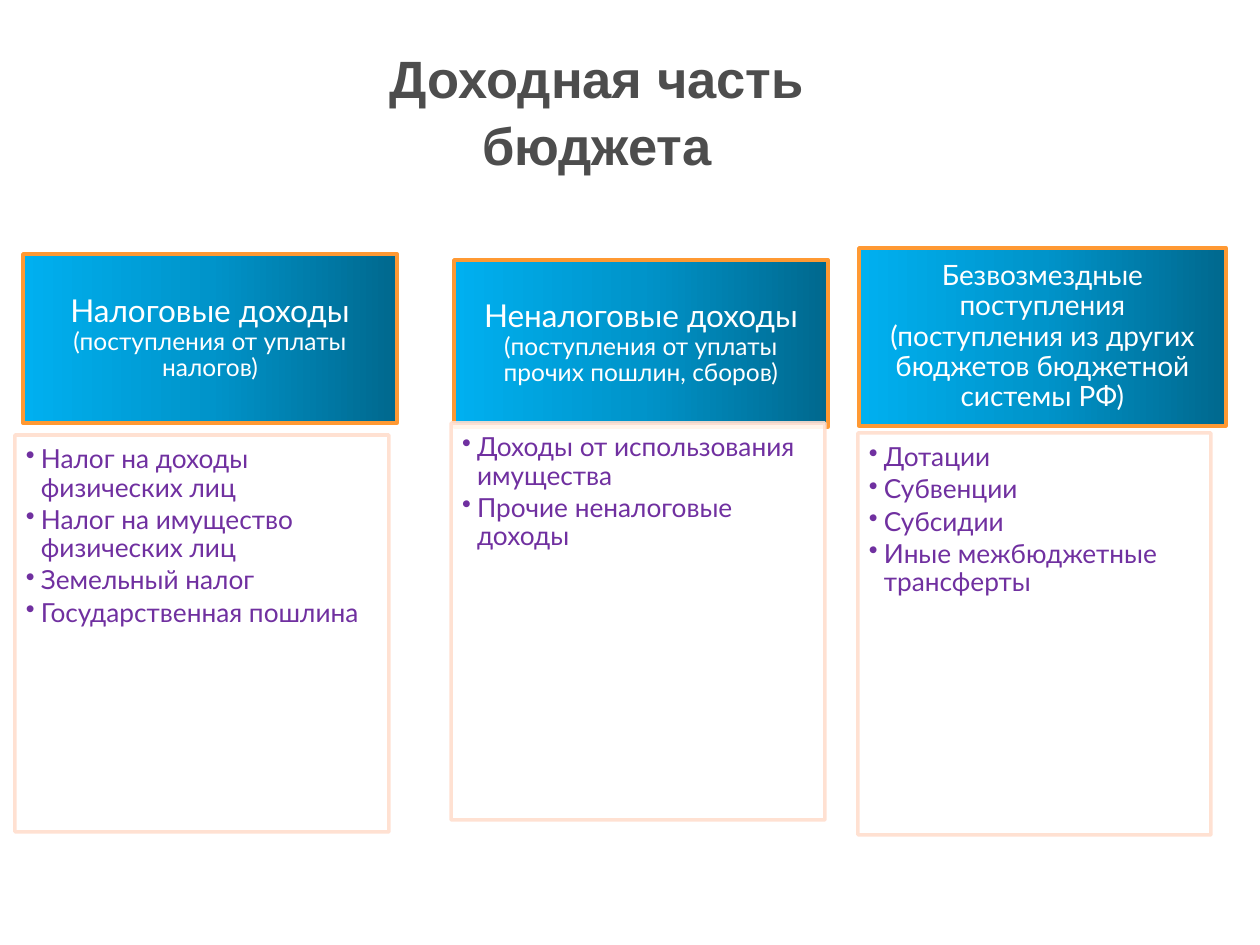
from copy import deepcopy

from lxml import etree
from pptx import Presentation
from pptx.dml.color import RGBColor
from pptx.enum.shapes import MSO_SHAPE
from pptx.enum.text import MSO_ANCHOR, PP_ALIGN
from pptx.oxml.ns import qn
from pptx.util import Emu, Pt

RECTANGLE = MSO_SHAPE.RECTANGLE
TOP, MIDDLE = MSO_ANCHOR.TOP, MSO_ANCHOR.MIDDLE
LEFT, CENTER = PP_ALIGN.LEFT, PP_ALIGN.CENTER
PX_PER_INCH = 126
TITLE_ONLY = 5

COLORS = {
    "title": "4D4D4D",
    "header_text": "FFFFFF",
    "header_line": "FF9933",
    "list_text": "7030A0",
    "list_fill": "FFFFFF",
    "list_line": "FFDECE",
}
HEADER_GRADIENT = [(0, "00688E"), (0.5, "0094CA"), (1, "00B0F0")]

COLUMNS = [
    {
        "header_box": (23, 254, 374, 169),
        "header": [("Налоговые доходы ", 18), ("(поступления от уплаты налогов)", 14)],
        "header_insets": (18, 10),
        "list_box": (15, 435, 374, 397),
        "items": [
            "Налог на доходы физических лиц",
            "Налог на имущество физических лиц",
            "Земельный налог",
            "Государственная пошлина",
        ],
    },
    {
        "header_box": (454, 260, 374, 167),
        "header": [
            ("Неналоговые доходы ", 18),
            ("(поступления от уплаты прочих пошлин, сборов)", 14),
        ],
        "header_insets": (18, 10),
        "list_box": (451, 423, 374, 397),
        "items": ["Доходы от использования имущества", "Прочие неналоговые доходы"],
    },
    {
        "header_box": (859, 248, 367, 178),
        "header": [
            (
                "Безвозмездные поступления (поступления из других "
                "бюджетов бюджетной системы РФ)",
                16,
            )
        ],
        "header_insets": (15, 9),
        "list_box": (858, 433, 353, 402),
        "items": ["Дотации", "Субвенции", "Субсидии", "Иные межбюджетные трансферты"],
    },
]


def px(value):
    """Turn pixels into EMU."""
    return Emu(round(value * 914400 / PX_PER_INCH))


def rgb(name):
    """Look up a named colour."""
    return RGBColor.from_string(COLORS[name])


def apply(target, **values):
    """Set attributes from format values."""
    for name, value in values.items():
        setattr(target, name, value)


def style_font(font, color, **values):
    """Format a font."""
    apply(font, **values)
    font.color.rgb = rgb(color)


def add_panel(slide, box, line_color, insets, anchor):
    """Add an outlined rectangle that is ready for text."""
    panel = slide.shapes.add_shape(RECTANGLE, *map(px, box))
    panel.shadow.inherit = False
    panel.line.color.rgb = rgb(line_color)
    panel.line.width = Pt(2)
    sides = ("margin_left", "margin_top", "margin_right", "margin_bottom")
    apply(panel.text_frame, word_wrap=True, vertical_anchor=anchor,
          **dict(zip(sides, map(px, insets))))
    return panel


def fill_gradient(panel):
    """Fill a panel with the three-stop header gradient."""
    panel.fill.gradient()
    panel.fill.gradient_angle = 180
    first_stop = next(panel._element.spPr.iter(qn("a:gs")))
    first_stop.addnext(deepcopy(first_stop))
    for stop, (position, color) in zip(panel.fill.gradient_stops, HEADER_GRADIENT):
        stop.position = position
        stop.color.rgb = RGBColor.from_string(color)


def add_title(slide, box, text):
    """Place and format the slide title."""
    title = slide.shapes.title
    apply(title, **dict(zip(("left", "top", "width", "height"), map(px, box))))
    apply(title.text_frame, text=text, word_wrap=True, vertical_anchor=TOP)
    heading = title.text_frame.paragraphs[0]
    apply(heading, alignment=CENTER, line_spacing=1.05)
    style_font(heading.runs[0].font, "title", name="Arial", size=Pt(30), bold=True)


def add_header(slide, box, parts, insets):
    """Add the gradient header of a column."""
    header = add_panel(slide, box, "header_line", insets * 2, MIDDLE)
    fill_gradient(header)
    heading = header.text_frame.paragraphs[0]
    apply(heading, alignment=CENTER, line_spacing=0.9)
    for text, size in parts:
        run = heading.add_run()
        run.text = text
        style_font(run.font, "header_text", name="Lato", size=Pt(size))


def add_income_list(slide, box, items):
    """Add the bulleted income list of a column."""
    panel = add_panel(slide, box, "list_line", (11, 11, 15, 16), TOP)
    panel.fill.solid()
    panel.fill.fore_color.rgb = rgb("list_fill")
    for color in panel._element.spPr.iter(qn("a:srgbClr")):
        etree.SubElement(color, qn("a:alpha"), val="90000")
    frame = panel.text_frame
    for index, item in enumerate(items):
        entry = frame.add_paragraph() if index else frame.paragraphs[0]
        entry.text = item
        apply(entry, alignment=LEFT, line_spacing=0.9, space_after=Pt(2.2))
        properties = entry._p.get_or_add_pPr()
        properties.set("marL", str(px(15)))
        properties.set("indent", str(-px(15)))
        etree.SubElement(properties, qn("a:buChar"), char="•")
        style_font(entry.runs[0].font, "list_text", name="Lato", size=Pt(15))


def add_column(slide, column):
    """Add one income group: its header and its list."""
    add_header(slide, column["header_box"], column["header"], column["header_insets"])
    add_income_list(slide, column["list_box"], column["items"])


def main():
    """Build the budget income slide."""
    deck = Presentation()
    apply(deck, slide_width=px(1260), slide_height=px(945))
    slide = deck.slides.add_slide(deck.slide_layouts[TITLE_ONLY])
    add_title(slide, (282, 37, 630, 140), "Доходная часть бюджета")
    for column in COLUMNS:
        add_column(slide, column)
    deck.save("out.pptx")


if __name__ == "__main__":
    main()
